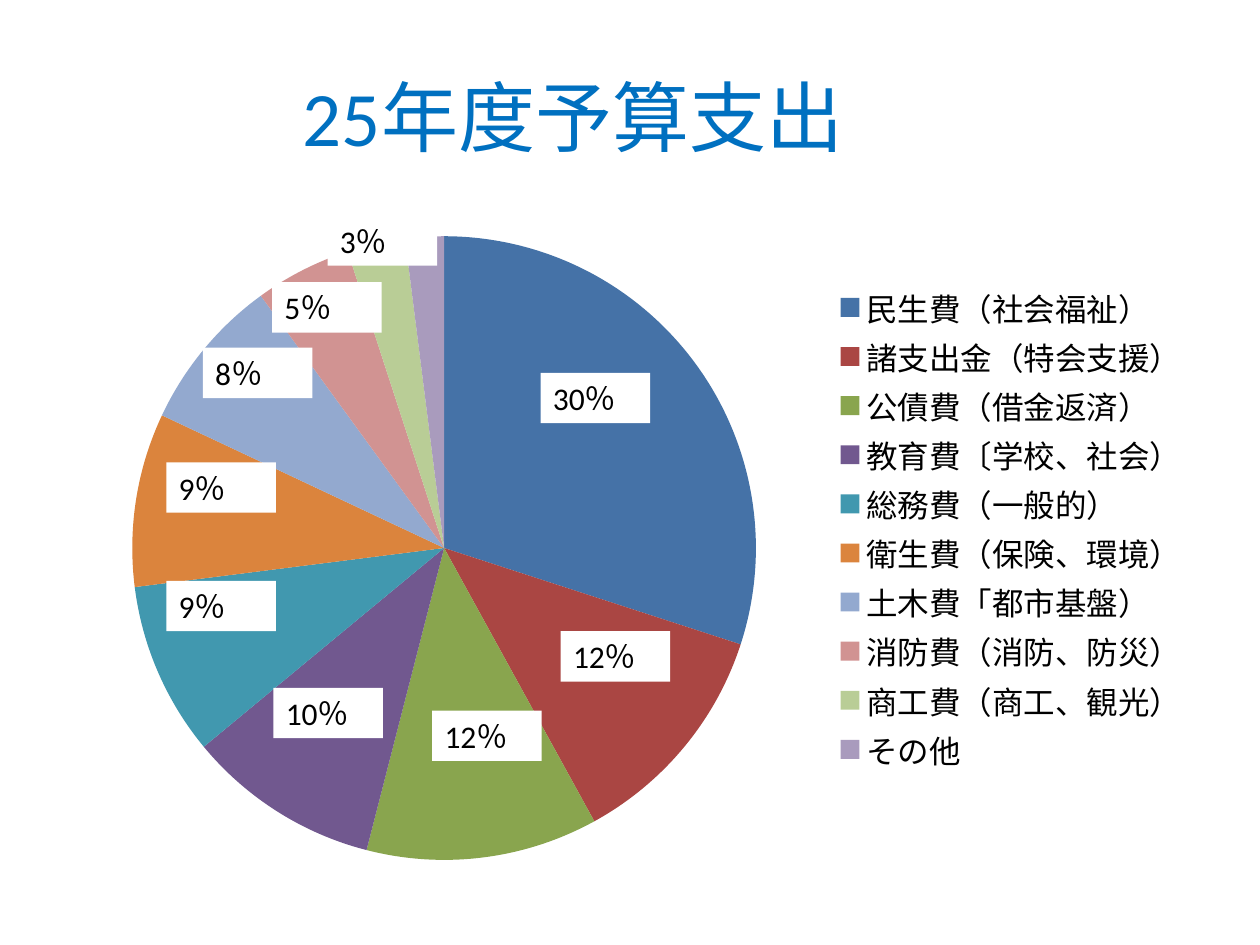
"""Build a slide with a pie chart of the fiscal-year budget expenditure."""
from typing import NamedTuple

from pptx import Presentation
from pptx.chart.chart import Chart
from pptx.chart.data import CategoryChartData
from pptx.dml.color import RGBColor
from pptx.enum.chart import XL_CHART_TYPE, XL_LEGEND_POSITION
from pptx.enum.shapes import MSO_SHAPE
from pptx.enum.text import MSO_ANCHOR, PP_ALIGN
from pptx.oxml import parse_xml
from pptx.oxml.ns import nsdecls
from pptx.shapes.base import BaseShape
from pptx.slide import Slide
from pptx.util import Inches, Pt

FONT = "Calibri"


class Expense(NamedTuple):
    name: str
    percent: int
    color: str
    label_at: tuple[float, float] | None = None


EXPENSES = [
    Expense("民生費（社会福祉）", 30, "4572A7", (4.29, 2.96)),
    Expense("諸支出金（特会支援）", 12, "AA4643", (4.45, 5.01)),
    Expense("公債費（借金返済）", 12, "89A54E", (3.43, 5.64)),
    Expense("教育費〔学校、社会）", 10, "71588F", (2.17, 5.46)),
    Expense("総務費（一般的）", 9, "4198AF", (1.32, 4.61)),
    Expense("衛生費（保険、環境）", 9, "DB843D", (1.32, 3.67)),
    Expense("土木費「都市基盤）", 8, "93A9CF", (1.61, 2.76)),
    Expense("消防費（消防、防災）", 5, "D19392", (2.16, 2.24)),
    Expense("商工費（商工、観光）", 3, "B9CD96", (2.6, 1.71)),
    Expense("その他", 2, "A99BBD"),
]


def rgb(color: str) -> RGBColor:
    """Turn a hex string into a colour."""
    return RGBColor.from_string(color)


def write_text(shape: BaseShape, text: str, *, size: int, color: str = "000000",
               align: PP_ALIGN = PP_ALIGN.LEFT,
               anchor: MSO_ANCHOR = MSO_ANCHOR.TOP) -> None:
    """Put one formatted paragraph into a shape."""
    frame = shape.text_frame
    frame.word_wrap = True
    frame.vertical_anchor = anchor
    paragraph = frame.paragraphs[0]
    paragraph.alignment = align
    run = paragraph.add_run()
    run.text = text
    run.font.name = FONT
    run.font.size = Pt(size)
    run.font.color.rgb = rgb(color)


def set_layout(chart: Chart, tag: str, index: int, target: str,
               x: float, y: float, width: float, height: float) -> None:
    """Place a chart part by fractions of the chart area."""
    part = chart.element.xpath(f"//c:{tag}")[0]
    for layout in part.xpath("./c:layout"):
        part.remove(layout)
    part.insert(index, parse_xml(
        f'<c:layout {nsdecls("c")}><c:manualLayout>{target}'
        '<c:xMode val="edge"/><c:yMode val="edge"/>'
        f'<c:x val="{x}"/><c:y val="{y}"/><c:w val="{width}"/><c:h val="{height}"/>'
        '</c:manualLayout></c:layout>'))


def add_pie(slide: Slide, expenses: list[Expense]) -> None:
    """Draw the pie chart with its legend."""
    data = CategoryChartData()
    data.categories = [expense.name for expense in expenses]
    data.add_series("Series 1", [expense.percent for expense in expenses])
    chart = slide.shapes.add_chart(
        XL_CHART_TYPE.PIE, Inches(0.51), Inches(1.71), Inches(9), Inches(5.23), data).chart
    chart.has_title = False
    chart.font.name = FONT
    chart.font.size = Pt(10)
    chart.font.color.rgb = rgb("000000")
    chart.has_legend = True
    chart.legend.position = XL_LEGEND_POSITION.RIGHT
    chart.legend.include_in_layout = False
    chart.legend.font.name = FONT
    chart.legend.font.size = Pt(18)
    chart.legend.font.color.rgb = rgb("000000")
    plot = chart.plots[0]
    plot.vary_by_categories = True
    for index, expense in enumerate(expenses):
        fill = plot.series[0].points[index].format.fill
        fill.solid()
        fill.fore_color.rgb = rgb(expense.color)
    set_layout(chart, "plotArea", 0, '<c:layoutTarget val="inner"/>', 0.06, 0.03, 0.55, 0.95)
    set_layout(chart, "legend", 1, "", 0.68, 0.1, 0.31, 0.75)


def add_label(slide: Slide, expense: Expense) -> None:
    """Draw the white percentage box of one slice."""
    left, top = expense.label_at
    label = slide.shapes.add_shape(
        MSO_SHAPE.RECTANGLE, Inches(left), Inches(top), Inches(0.87), Inches(0.4))
    label.shadow.inherit = False
    label.fill.solid()
    label.fill.fore_color.rgb = rgb("FFFFFF")
    label.line.fill.background()
    write_text(label, f"{expense.percent}％", size=18)


def main() -> None:
    """Build and save the slide."""
    presentation = Presentation()
    presentation.slide_width = Inches(10)
    presentation.slide_height = Inches(7.5)
    slide = presentation.slides.add_slide(presentation.slide_layouts[6])
    title = slide.shapes.add_textbox(Inches(2.03), Inches(0.29), Inches(5.04), Inches(1.25))
    write_text(title, "25年度予算支出", size=44, color="0070C0",
               align=PP_ALIGN.CENTER, anchor=MSO_ANCHOR.MIDDLE)
    add_pie(slide, EXPENSES)
    for expense in EXPENSES:
        if expense.label_at:
            add_label(slide, expense)
    presentation.save("out.pptx")


if __name__ == "__main__":
    main()
